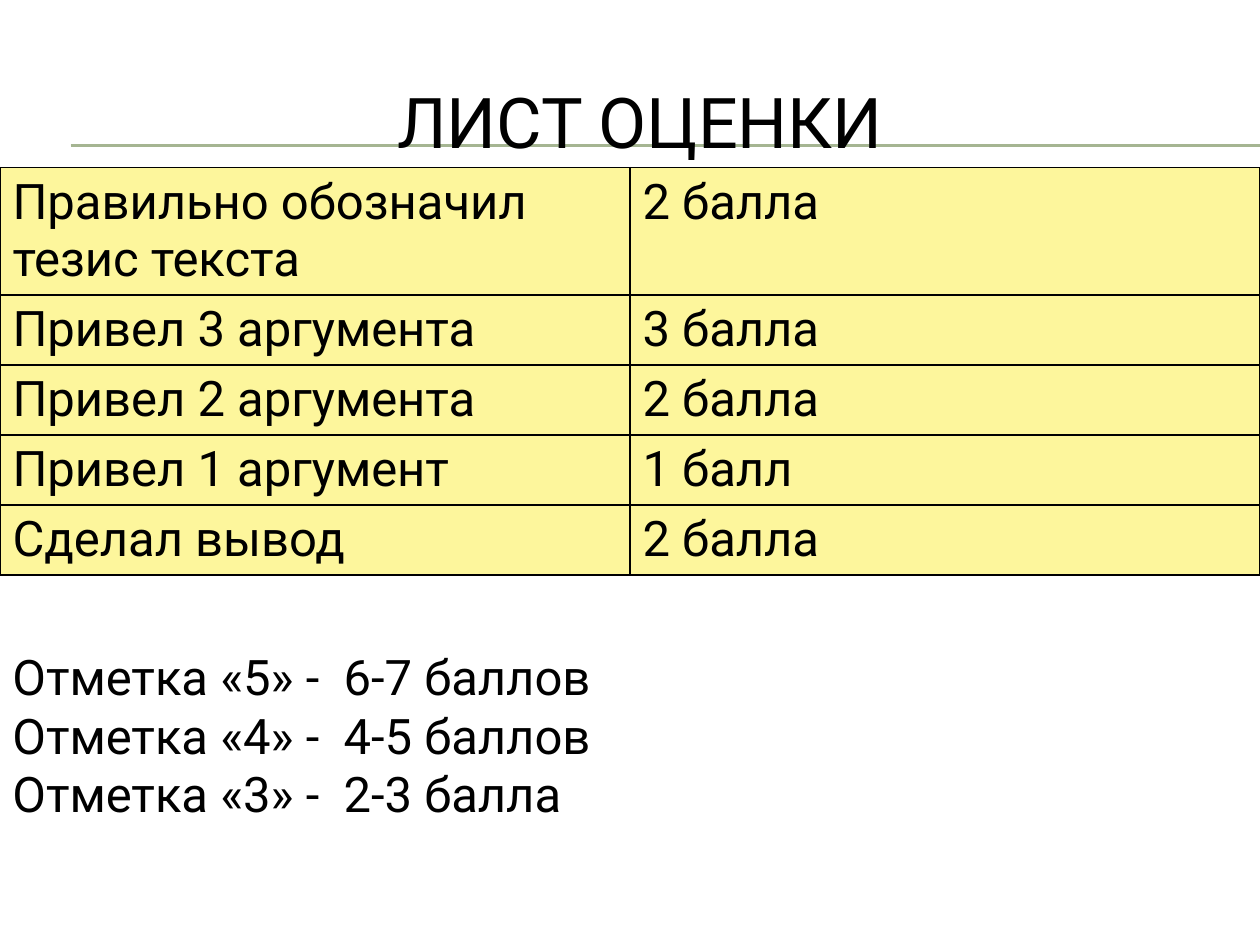
from pptx import Presentation
from pptx.dml.color import RGBColor
from pptx.enum.shapes import MSO_CONNECTOR
from pptx.enum.text import MSO_ANCHOR, MSO_AUTO_SIZE, PP_ALIGN
from pptx.oxml.ns import qn
from pptx.util import Inches, Pt
from lxml import etree

STRAIGHT = MSO_CONNECTOR.STRAIGHT
MIDDLE = MSO_ANCHOR.MIDDLE
CENTER = PP_ALIGN.CENTER
GROW = MSO_AUTO_SIZE.SHAPE_TO_FIT_TEXT

BLACK = RGBColor(0x00, 0x00, 0x00)
YELLOW = RGBColor(0xFD, 0xF6, 0x9C)
GREEN = RGBColor(0xA5, 0xB5, 0x92)
FONT = "Roboto"
TITLE_SIZE = 40
BODY_SIZE = 28

CRITERIA = [
    ("Правильно обозначил тезис текста", "2 балла"),
    ("Привел 3 аргумента", "3 балла"),
    ("Привел 2 аргумента", "2 балла"),
    ("Привел 1 аргумент", "1 балл"),
    ("Сделал вывод", "2 балла"),
]
MARKS = [
    "Отметка «5» -  6-7 баллов",
    "Отметка «4» -  4-5 баллов",
    "Отметка «3» -  2-3 балла",
]


def add_run(para, text, size):
    span = para.add_run()
    span.text = text
    span.font.name = FONT
    span.font.size = Pt(size)
    span.font.color.rgb = BLACK


def set_title(page, text):
    title = page.shapes.title
    title.left, title.top = Inches(0.33), Inches(0.5)
    title.width, title.height = Inches(9.5), Inches(0.92)
    title.text_frame.vertical_anchor = MIDDLE
    para = title.text_frame.paragraphs[0]
    para.alignment = CENTER
    add_run(para, text, TITLE_SIZE)


def add_rule_behind_title(page, y):
    rule = page.shapes.add_connector(
        STRAIGHT, Inches(0.56), Inches(y), Inches(10), Inches(y))
    rule.line.color.rgb = GREEN
    rule.line.width = Pt(0.75)
    etree.SubElement(rule.element.spPr, qn("a:effectLst"))
    page.shapes.title.element.addprevious(rule.element)


def add_cell_borders(cell):
    properties = cell._tc.get_or_add_tcPr()
    for position, side in enumerate(("a:lnL", "a:lnR", "a:lnT", "a:lnB")):
        border = etree.Element(qn(side), w=str(Pt(1)))
        fill = etree.SubElement(border, qn("a:solidFill"))
        etree.SubElement(fill, qn("a:srgbClr"), val=str(BLACK))
        properties.insert(position, border)


def add_criteria_table(page, criteria):
    row_height = Inches(0.55)
    table = page.shapes.add_table(
        len(criteria), 2, Inches(0), Inches(1.33),
        Inches(10), row_height * len(criteria)).table
    table.first_row = False
    table.horz_banding = False
    for row, texts in zip(table.rows, criteria):
        row.height = row_height
        for cell, text in zip(row.cells, texts):
            cell.fill.solid()
            cell.fill.fore_color.rgb = YELLOW
            add_cell_borders(cell)
            add_run(cell.text_frame.paragraphs[0], text, BODY_SIZE)


def add_marks(page, marks):
    box = page.shapes.add_textbox(
        Inches(0), Inches(5.08), Inches(7.11), Inches(1.51))
    frame = box.text_frame
    frame.word_wrap = True
    frame.auto_size = GROW
    for index, mark in enumerate(marks):
        para = frame.add_paragraph() if index else frame.paragraphs[0]
        add_run(para, mark, BODY_SIZE)


def main():
    deck = Presentation()
    deck.slide_width, deck.slide_height = Inches(10), Inches(7.5)
    page = deck.slides.add_slide(deck.slide_layouts[5])
    set_title(page, "ЛИСТ ОЦЕНКИ")
    for y in (1.15, 1.16):
        add_rule_behind_title(page, y)
    add_criteria_table(page, CRITERIA)
    add_marks(page, MARKS)
    deck.save("out.pptx")


if __name__ == "__main__":
    main()
